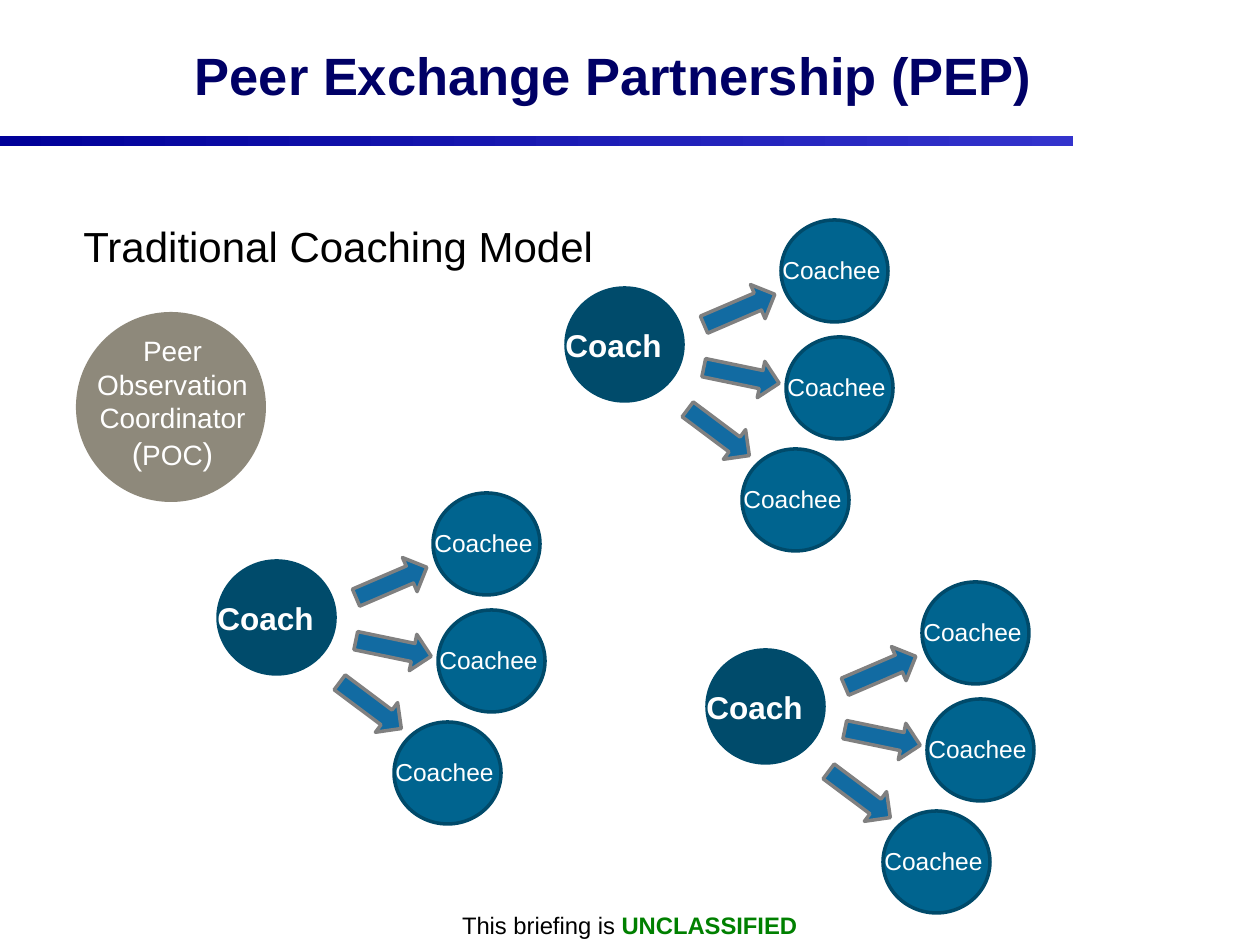
from lxml.etree import SubElement
from pptx import Presentation
from pptx.dml.color import RGBColor
from pptx.enum.shapes import MSO_SHAPE as Preset
from pptx.enum.text import MSO_ANCHOR as Anchor, PP_ALIGN as Align
from pptx.oxml.ns import qn
from pptx.util import Emu, Pt

SCALE = 914400 / 126  # EMU in one px
FONT = "Arial"

WHITE = RGBColor(0xFF, 0xFF, 0xFF)
BLACK = RGBColor(0x00, 0x00, 0x00)
NAVY = RGBColor(0x00, 0x00, 0x66)
RULE_START = RGBColor(0x00, 0x00, 0x99)
RULE_END = RGBColor(0x33, 0x33, 0xCC)
GREEN = RGBColor(0x00, 0x80, 0x00)
BROWN = RGBColor(0x28, 0x1D, 0x02)
COACH_FILL = RGBColor(0x00, 0x4B, 0x6B)
COACHEE_FILL = RGBColor(0x00, 0x64, 0x8F)
COACHEE_LINE = RGBColor(0x00, 0x4A, 0x6A)
ARROW_FILL = RGBColor(0x12, 0x6B, 0xA2)
ARROW_LINE = RGBColor(0x80, 0x80, 0x80)

# Coachee circle, arrow position and arrow rotation, from the team's corner
COACHEES = [
    ((215, 0), (135, 71), 336.8),
    ((220, 117), (137, 137), 11.7),
    ((176, 229), (114, 194), 36.8),
]
TEAM_CORNERS = [(218, 493), (566, 220), (707, 582)]


def px(value):
    return Emu(round(value * SCALE))


def add_shape(page, preset, box, fill=None, line=None):
    shape = page.shapes.add_shape(preset, *map(px, box))
    shape.shadow.inherit = False
    if fill is not None:
        shape.fill.solid()
        shape.fill.fore_color.rgb = fill
    if line is None:
        shape.line.fill.background()
    else:
        shape.line.color.rgb = line
        shape.line.width = Pt(2)
    return shape


def format_span(span, size, color, bold=False):
    span.font.name = FONT
    span.font.size = Pt(size)
    span.font.color.rgb = color
    span.font.bold = bold


def add_text(page, box, text, size, color, bold=False, align=Align.LEFT,
             anchor=Anchor.MIDDLE):
    frame = page.shapes.add_textbox(*map(px, box)).text_frame
    frame.word_wrap = True
    frame.vertical_anchor = anchor
    frame.text = text
    for para in frame.paragraphs:
        para.alignment = align
        for span in para.runs:
            format_span(span, size, color, bold)
    return frame


def add_header(page, left, top):
    add_text(page, (left + 136, top + 23, 955, 103),
             "Peer Exchange Partnership (PEP)", 30, NAVY, True, Align.CENTER)
    rule = add_shape(page, Preset.RECTANGLE, (left, top + 136, 1073, 10))
    rule.fill.gradient()
    rule.fill.gradient_angle = 0
    for stop, color in zip(rule.fill.gradient_stops, (RULE_START, RULE_END)):
        stop.color.rgb = color


def add_footer(page, left, top):
    frame = add_text(page, (left, top, 625, 39), "This briefing is ", 13.6,
                     BLACK, align=Align.CENTER, anchor=Anchor.TOP)
    frame.margin_left = frame.margin_right = px(10)
    frame.margin_top = frame.margin_bottom = px(5)
    span = frame.paragraphs[0].add_run()
    span.text = "UNCLASSIFIED"
    format_span(span, 13.6, GREEN, True)


def add_coordinator(page, left, top):
    circle = add_shape(page, Preset.OVAL, (left, top, 190, 190), BROWN)
    color = circle.fill._xPr.find(qn("a:solidFill"))[0]
    SubElement(color, qn("a:alpha"), val="52000")
    frame = add_text(page, (left - 3, top + 15, 199, 152),
                     "Peer Observation Coordinator", 16, WHITE,
                     align=Align.CENTER)
    para = frame.add_paragraph()
    para.alignment = Align.CENTER
    for text, size in (("(", 18), ("POC", 16), (")", 18)):
        span = para.add_run()
        span.text = text
        format_span(span, size, WHITE)


def add_team(page, left, top):
    # Coach
    add_shape(page, Preset.OVAL, (left, top + 68, 117, 113),
              COACH_FILL, COACH_FILL)
    add_text(page, (left - 13, top + 100, 136, 50), "Coach", 18, WHITE, True)

    # Coachees, each with the arrow that leads to it
    for (circle_x, circle_y), (arrow_x, arrow_y), angle in COACHEES:
        x, y = left + circle_x, top + circle_y
        add_shape(page, Preset.OVAL, (x, y, 107, 102),
                  COACHEE_FILL, COACHEE_LINE)
        add_text(page, (x - 11, y + 28, 128, 43), "Coachee", 14, WHITE)
        arrow = add_shape(page, Preset.RIGHT_ARROW,
                          (left + arrow_x, top + arrow_y, 77, 37),
                          ARROW_FILL, ARROW_LINE)
        arrow.rotation = angle


def main():
    deck = Presentation()
    deck.slide_width, deck.slide_height = px(1260), px(945)
    page = deck.slides.add_slide(deck.slide_layouts[6])

    add_footer(page, 317, 906)
    add_header(page, 0, 0)
    add_text(page, (71, 214, 563, 63), "Traditional Coaching Model", 24,
             BLACK, anchor=Anchor.TOP)
    add_coordinator(page, 76, 312)
    for corner in TEAM_CORNERS:
        add_team(page, *corner)

    deck.save("out.pptx")


if __name__ == "__main__":
    main()
